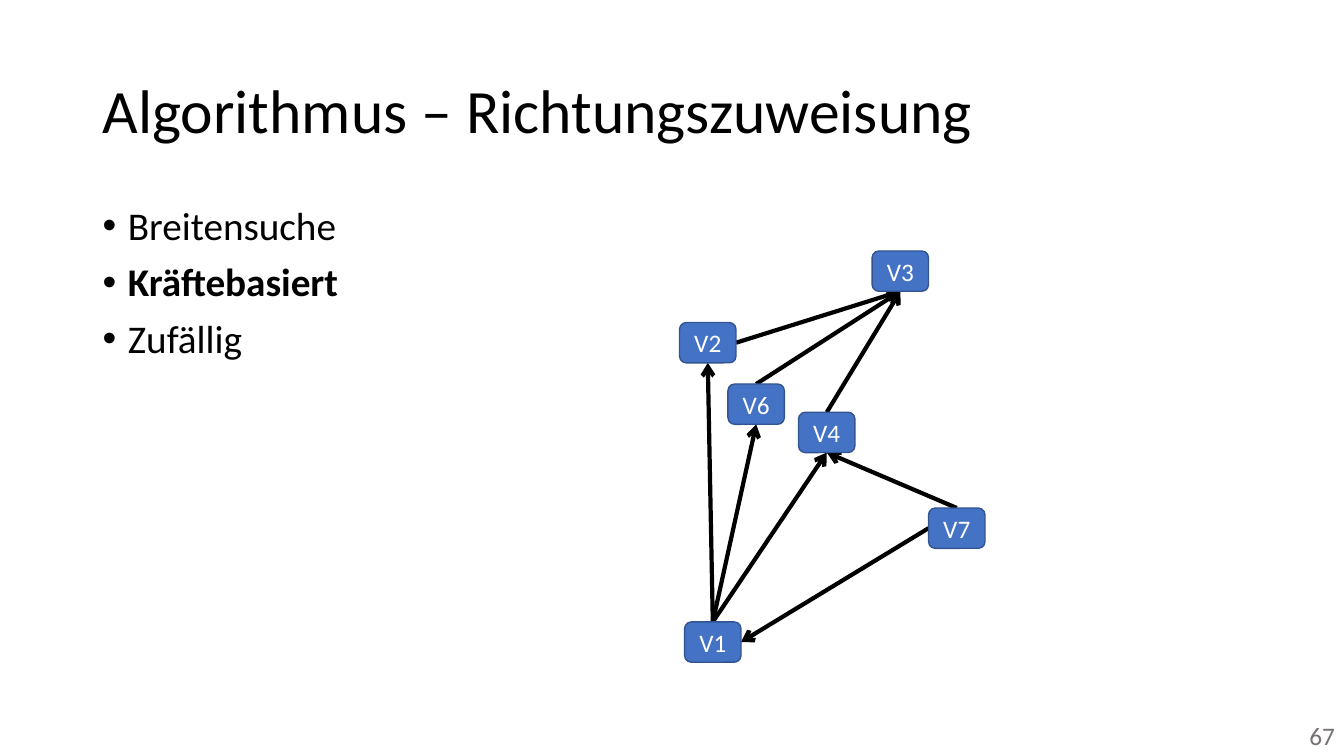
from typing import NamedTuple

from lxml import etree
from pptx import Presentation
from pptx.dml.color import RGBColor
from pptx.enum.shapes import MSO_CONNECTOR, MSO_SHAPE
from pptx.enum.text import MSO_ANCHOR, PP_ALIGN
from pptx.oxml.ns import qn
from pptx.util import Inches, Pt

ROUNDED, STRAIGHT = MSO_SHAPE.ROUNDED_RECTANGLE, MSO_CONNECTOR.STRAIGHT
MIDDLE, TOP_ANCHOR = MSO_ANCHOR.MIDDLE, MSO_ANCHOR.TOP
LEFT_ALIGN, CENTER, RIGHT_ALIGN = PP_ALIGN.LEFT, PP_ALIGN.CENTER, PP_ALIGN.RIGHT
TOP, LEFT, BOTTOM, RIGHT = range(4)  # connection sites of a rectangle

FONT = "Calibri"
COLORS = {
    "text": "000000",
    "edge": "000000",
    "node": "4472C4",
    "node_line": "325491",
    "node_text": "FFFFFF",
    "page_number": "767171",
}


class Box(NamedTuple):
    """A region of the slide, in inches."""
    left: float
    top: float
    width: float
    height: float

    def emu(self):
        return [Inches(length) for length in self]


TITLE_BOX = Box(0.92, 0.4, 11.5, 1.45)
LIST_BOX = Box(0.92, 2, 5.65, 4.76)
GRAPH_BOX = Box(6.74, 2.49, 3.03, 4.08)
NUMBER_BOX = Box(12.88, 7.1, 0.46, 0.4)

GRID = 0.01  # cell of the graph grid, in inches
NODE_COLUMNS, NODE_ROWS = 56, 40
NODES = {  # column and row of each node's corner
    "V1": (5, 368),
    "V2": (0, 71),
    "V3": (191, 0),
    "V4": (118, 160),
    "V6": (48, 132),
    "V7": (247, 255),
}
EDGES = [
    ("V1", TOP, "V2", BOTTOM),
    ("V1", TOP, "V6", BOTTOM),
    ("V1", TOP, "V4", BOTTOM),
    ("V7", LEFT, "V1", RIGHT),
    ("V2", RIGHT, "V3", BOTTOM),
    ("V6", TOP, "V3", BOTTOM),
    ("V4", TOP, "V3", BOTTOM),
    ("V7", TOP, "V4", BOTTOM),
]


def color(name):
    return RGBColor.from_string(COLORS[name])


def style(para, size, color_name, align=LEFT_ALIGN, bold=False):
    para.alignment = align
    para.font.name = FONT
    para.font.size = Pt(size)
    para.font.bold = bold
    para.font.color.rgb = color(color_name)


def add_text_frame(page, box, anchor=TOP_ANCHOR, wrap=True):
    frame = page.shapes.add_textbox(*box.emu()).text_frame
    frame.word_wrap = wrap
    frame.vertical_anchor = anchor
    return frame


def add_title(page, box, text):
    para = add_text_frame(page, box, MIDDLE).paragraphs[0]
    para.text = text
    para.line_spacing = 0.9
    style(para, 44, "text")


def add_bullet(para):
    props = para._p.get_or_add_pPr()
    props.set("marL", str(Inches(0.25)))
    props.set("indent", str(-Inches(0.25)))
    etree.SubElement(props, qn("a:buFont"), typeface="Arial")
    etree.SubElement(props, qn("a:buChar"), char="•")


def add_list(page, box, items, current):
    """Bulleted list with the current item in bold."""
    frame = add_text_frame(page, box)
    frame.text = "\n".join(items)
    for para, item in zip(frame.paragraphs, items):
        para.line_spacing = 0.9
        para.space_before = Pt(10)
        add_bullet(para)
        style(para, 28, "text", bold=item == current)


def add_arrow(page):
    """Unplaced arrow; it gets its ends once its nodes exist."""
    arrow = page.shapes.add_connector(STRAIGHT, 0, 0, 0, 0)
    arrow.line.color.rgb = color("edge")
    arrow.line.width = Pt(3)
    etree.SubElement(arrow.line._get_or_add_ln(), qn("a:tailEnd"), type="arrow")
    etree.SubElement(arrow._element.spPr, qn("a:effectLst"))
    return arrow


def add_node(page, box, label):
    node = page.shapes.add_shape(ROUNDED, *box.emu())
    node.shadow.inherit = False
    node.fill.solid()
    node.fill.fore_color.rgb = color("node")
    node.line.color.rgb = color("node_line")
    node.line.width = Pt(1)
    node.text_frame.vertical_anchor = MIDDLE
    para = node.text_frame.paragraphs[0]
    para.text = label
    style(para, 18, "node_text", CENTER)
    return node


def add_graph(page, box):
    """Directed graph; the arrows lie behind the nodes."""
    arrows = [add_arrow(page) for _ in EDGES]
    nodes = {}
    for label, (column, row) in NODES.items():
        node_box = Box(box.left + column * GRID, box.top + row * GRID,
                       NODE_COLUMNS * GRID, NODE_ROWS * GRID)
        nodes[label] = add_node(page, node_box, label)
    for arrow, (source, source_site, target, target_site) in zip(arrows, EDGES):
        arrow.begin_connect(nodes[source], source_site)
        arrow.end_connect(nodes[target], target_site)


def add_page_number(page, box, number):
    para = add_text_frame(page, box, wrap=False).paragraphs[0]
    para.text = str(number)
    style(para, 18, "page_number", RIGHT_ALIGN)


def main():
    deck = Presentation()
    deck.slide_width, deck.slide_height = Inches(13.33), Inches(7.5)
    page = deck.slides.add_slide(deck.slide_layouts[6])
    add_title(page, TITLE_BOX, "Algorithmus – Richtungszuweisung")
    add_list(page, LIST_BOX, ["Breitensuche", "Kräftebasiert", "Zufällig"],
             current="Kräftebasiert")
    add_graph(page, GRAPH_BOX)
    add_page_number(page, NUMBER_BOX, 67)
    deck.save("out.pptx")


if __name__ == "__main__":
    main()
